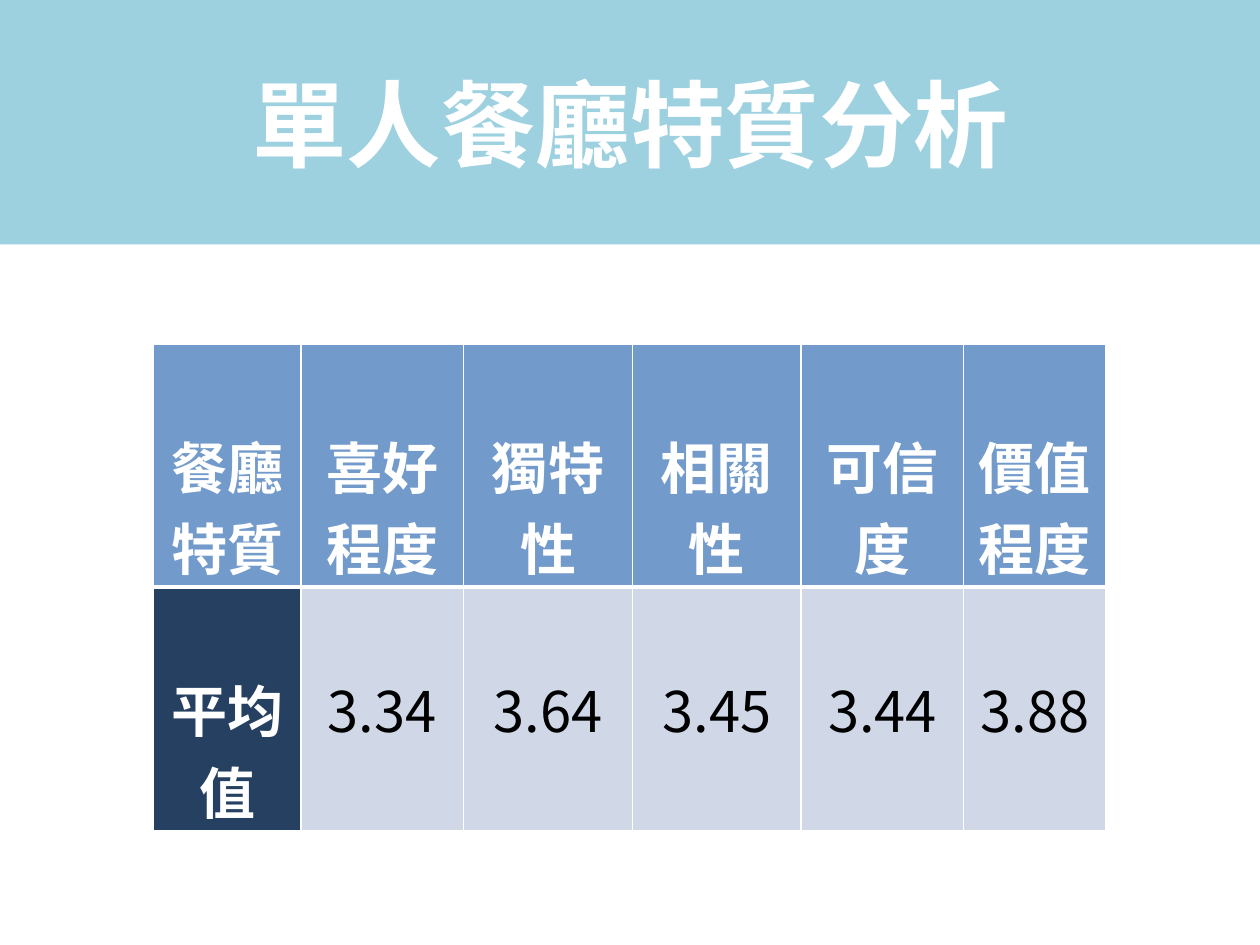
from dataclasses import dataclass
from typing import Optional

from lxml.etree import SubElement
from pptx import Presentation
from pptx.dml.color import RGBColor
from pptx.enum.text import MSO_ANCHOR, MSO_AUTO_SIZE, PP_ALIGN
from pptx.oxml.ns import qn
from pptx.util import Inches, Pt

FONT = "Noto Sans CJK SC"
WHITE = RGBColor(0xFF, 0xFF, 0xFF)
BLACK = RGBColor(0x00, 0x00, 0x00)
AQUA = RGBColor(0x93, 0xCD, 0xDD)
BLUE = RGBColor(0x4F, 0x81, 0xBD)
NAVY = RGBColor(0x25, 0x40, 0x61)
PALE = RGBColor(0xD0, 0xD8, 0xE8)

SLIDE_WIDTH, SLIDE_HEIGHT = 10, 7.5
BANNER_HEIGHT = 1.94
TABLE_LEFT, TABLE_TOP = 1.22, 2.73
ROW_HEIGHTS = (1.72, 1.78)
THIN, THICK = 1, 3


@dataclass
class Trait:
    name: str
    mean: str
    width: float


@dataclass
class CellStyle:
    fill: RGBColor
    color: RGBColor = WHITE
    bold: bool = True
    opacity: Optional[int] = None


TRAITS = [
    Trait("餐廳特質", "平均值", 1.17),
    Trait("喜好程度", "3.34", 1.29),
    Trait("獨特性", "3.64", 1.34),
    Trait("相關性", "3.45", 1.34),
    Trait("可信度", "3.44", 1.29),
    Trait("價值程度", "3.88", 1.13),
]
HEADER = CellStyle(BLUE, opacity=80)
ROW_LABEL = CellStyle(NAVY)
VALUE = CellStyle(PALE, BLACK, bold=False)


def apply(target, formats: dict) -> None:
    for name, value in formats.items():
        setattr(target, name, value)


def paint(part, color: RGBColor, opacity: Optional[int] = None) -> None:
    part.fill.solid()
    part.fill.fore_color.rgb = color
    if opacity is not None:
        tint = part.fill._xPr.find(qn("a:solidFill")).find(qn("a:srgbClr"))
        SubElement(tint, qn("a:alpha"), val=str(opacity * 1000))


def write(frame, wording: str, size: int, color: RGBColor, bold: bool) -> None:
    paragraph = frame.paragraphs[0]
    paragraph.alignment = PP_ALIGN.CENTER
    run = paragraph.add_run()
    run.text = wording
    apply(run.font, {"name": FONT, "size": Pt(size), "bold": bold})
    run.font.color.rgb = color
    SubElement(run.font._element, qn("a:ea"), typeface=FONT)


def add_borders(cell, top: int, bottom: int) -> None:
    widths = {"lnL": THIN, "lnR": THIN, "lnT": top, "lnB": bottom}
    for side, width in widths.items():
        line = SubElement(cell._tc.get_or_add_tcPr(), qn(f"a:{side}"), w=str(Pt(width)))
        SubElement(SubElement(line, qn("a:solidFill")), qn("a:srgbClr"), val=str(WHITE))


def fill_cell(cell, wording: str, style: CellStyle, is_header: bool) -> None:
    apply(cell, {
        "margin_left": Inches(0.07), "margin_right": Inches(0.07),
        "margin_top": Inches(0.64), "margin_bottom": 0,
        "vertical_anchor": MSO_ANCHOR.TOP,
    })
    # The header rule is thick on both sides of the shared edge
    add_borders(cell, *((THIN, THICK) if is_header else (THICK, THIN)))
    paint(cell, style.fill, style.opacity)
    write(cell.text_frame, wording, 32, style.color, style.bold)


def add_banner(slide, wording: str) -> None:
    banner = slide.shapes.title
    apply(banner, {"left": 0, "top": 0, "width": Inches(SLIDE_WIDTH),
                   "height": Inches(BANNER_HEIGHT)})
    paint(banner, AQUA, 90)
    apply(banner.text_frame, {"word_wrap": True, "auto_size": MSO_AUTO_SIZE.NONE,
                              "vertical_anchor": MSO_ANCHOR.MIDDLE})
    write(banner.text_frame, wording, 54, WHITE, True)


def add_trait_table(slide) -> None:
    table = slide.shapes.add_table(
        len(ROW_HEIGHTS), len(TRAITS), Inches(TABLE_LEFT), Inches(TABLE_TOP),
        Inches(sum(trait.width for trait in TRAITS)), Inches(sum(ROW_HEIGHTS)),
    ).table
    table.horz_banding = False
    for row, height in zip(table.rows, ROW_HEIGHTS):
        row.height = Inches(height)
    for column, trait in enumerate(TRAITS):
        table.columns[column].width = Inches(trait.width)
        fill_cell(table.cell(0, column), trait.name, HEADER, True)
        mean_style = VALUE if column else ROW_LABEL
        fill_cell(table.cell(1, column), trait.mean, mean_style, False)


def main() -> None:
    deck = Presentation()
    apply(deck, {"slide_width": Inches(SLIDE_WIDTH), "slide_height": Inches(SLIDE_HEIGHT)})
    slide = deck.slides.add_slide(deck.slide_layouts[5])
    add_banner(slide, "單人餐廳特質分析")
    add_trait_table(slide)
    deck.save("out.pptx")


if __name__ == "__main__":
    main()
